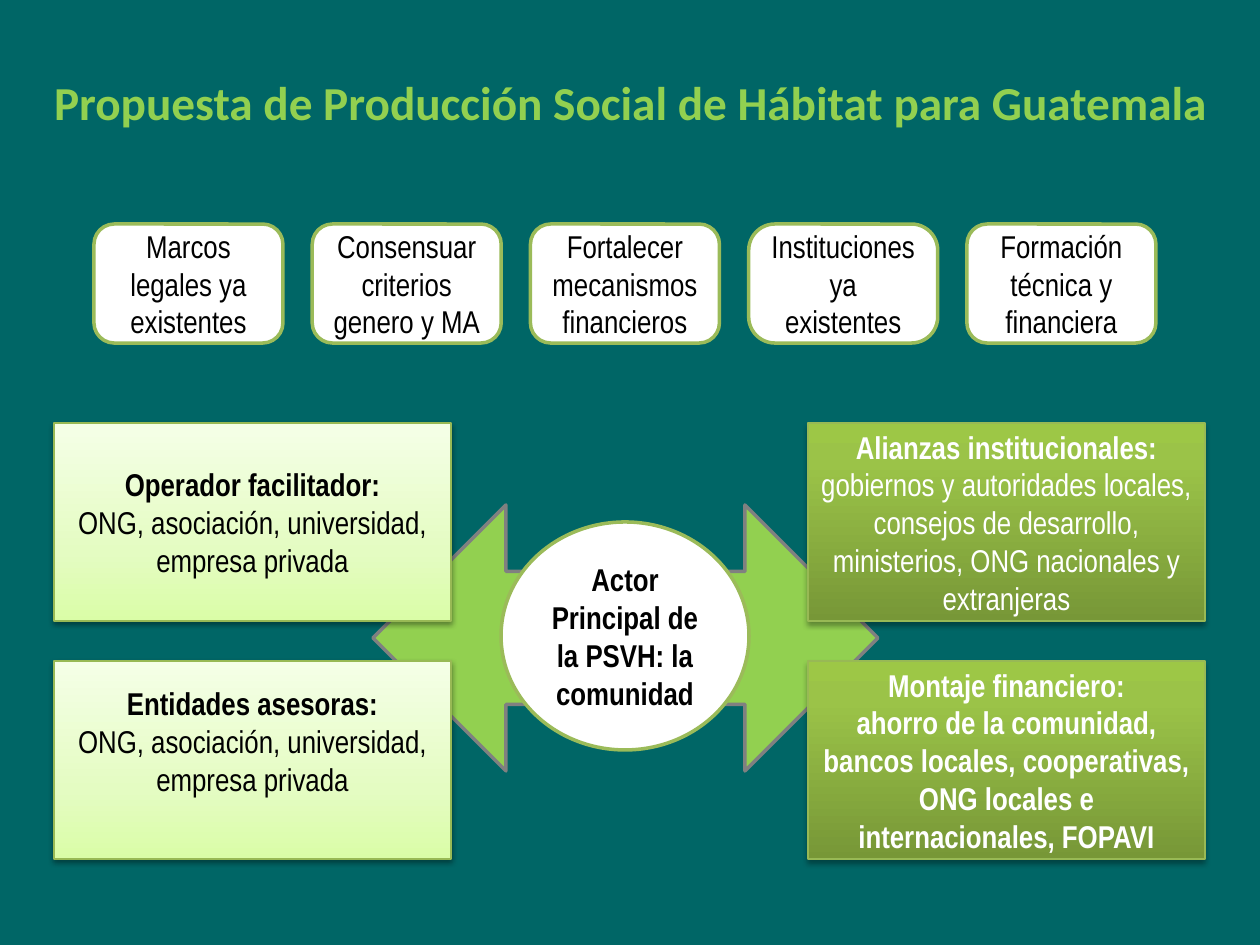
from lxml import etree
from pptx import Presentation
from pptx.dml.color import RGBColor
from pptx.enum.shapes import MSO_SHAPE
from pptx.enum.text import MSO_ANCHOR, PP_ALIGN
from pptx.oxml.ns import qn
from pptx.util import Emu, Pt

TEAL = RGBColor(0x00, 0x66, 0x66)
LIME = RGBColor(0x92, 0xD0, 0x50)
OLIVE = RGBColor(0x9B, 0xBB, 0x59)
EDGE = RGBColor(0x98, 0xB9, 0x55)
GRAY = RGBColor(0x80, 0x80, 0x80)
WHITE = RGBColor(0xFF, 0xFF, 0xFF)
BLACK = RGBColor(0x00, 0x00, 0x00)
PALE_STOPS = [(0, RGBColor(0xDA, 0xFD, 0xA7)), (35, RGBColor(0xE4, 0xFC, 0xC2)),
              (100, RGBColor(0xF5, 0xFF, 0xE7))]
GREEN_STOPS = [(0, RGBColor(0x77, 0x97, 0x37)), (80, RGBColor(0x9B, 0xC3, 0x48)),
               (100, RGBColor(0x9D, 0xC7, 0x46))]
CENTER, MIDDLE = PP_ALIGN.CENTER, MSO_ANCHOR.MIDDLE
RECT, ROUND = MSO_SHAPE.RECTANGLE, MSO_SHAPE.ROUNDED_RECTANGLE
OVAL, ARROW = MSO_SHAPE.OVAL, MSO_SHAPE.LEFT_RIGHT_ARROW

TITLE = "Propuesta de Producción Social de Hábitat para Guatemala"
# text, corner rounding
CONDITIONS = [
    ("Marcos legales ya existentes", 0.17),
    ("Consensuar criterios genero y MA", 0.17),
    ("Fortalecer mecanismos financieros", 0.17),
    ("Instituciones ya existentes", 0.22),
    ("Formación técnica y financiera", 0.17),
]
CORE = "Actor Principal de la PSVH: la comunidad"
ADVISERS = "ONG, asociación, universidad, empresa privada"
# column, row, heading, body, body bold, extra bottom inset
ACTORS = [
    (0, 0, "Operador facilitador:", ADVISERS, False, 0),
    (1, 0, "Alianzas institucionales:",
     "gobiernos y autoridades locales, consejos de desarrollo, "
     "ministerios, ONG nacionales y extranjeras", False, 0),
    (1, 1, "Montaje financiero:",
     "ahorro de la comunidad, bancos locales, cooperativas, "
     "ONG locales e internacionales, FOPAVI", True, 0),
    (0, 1, "Entidades asesoras:", ADVISERS, False, 38),
]
# text colour, gradient, shadow opacity, shadow distance in points
COLUMN_STYLES = [(BLACK, PALE_STOPS, 38, 1.6), (WHITE, GREEN_STOPS, 35, 1.8)]


def px(n):
    return Emu(round(n * 914400 / 126))


def add_box(slide, kind, left, top, width, height, line, weight):
    sp = slide.shapes.add_shape(kind, px(left), px(top), px(width), px(height))
    sp.shadow.inherit = False
    sp.fill.solid()
    sp.fill.fore_color.rgb = WHITE
    sp.line.color.rgb = line
    sp.line.width = Pt(weight)
    return sp


def write(sp, paragraphs, color):
    """Fill a shape with centred (text, bold) paragraphs."""
    tf = sp.text_frame
    tf.word_wrap = True
    tf.vertical_anchor = MIDDLE
    for i, (text, bold) in enumerate(paragraphs):
        p = tf.add_paragraph() if i else tf.paragraphs[0]
        p.text = text
        p.alignment = CENTER
        p.font.name = "Arial Narrow"
        p.font.size = Pt(18)
        p.font.bold = bold
        p.font.color.rgb = color


def add_color(parent, color):
    return etree.SubElement(parent, qn("a:srgbClr"), val=str(color))


def set_gradient(sp, stops):
    """Run the stops from the bottom edge to the top edge."""
    sp.fill.gradient()
    sp.fill.gradient_angle = 90
    stop_list = sp._element.spPr.find(qn("a:gradFill")).find(qn("a:gsLst"))
    for old in list(stop_list):
        stop_list.remove(old)
    for percent, color in stops:
        add_color(etree.SubElement(stop_list, qn("a:gs"), pos=str(percent * 1000)), color)


def set_shadow(sp, opacity, distance):
    effects = sp._element.spPr.find(qn("a:effectLst"))
    shadow = etree.SubElement(effects, qn("a:outerShdw"), blurRad=str(Pt(3.1)),
                              dist=str(Pt(distance)), dir="5400000", rotWithShape="0")
    etree.SubElement(add_color(shadow, BLACK), qn("a:alpha"), val=str(opacity * 1000))


def main():
    prs = Presentation()
    prs.slide_width, prs.slide_height = px(1260), px(945)
    slide = prs.slides.add_slide(prs.slide_layouts[5])
    slide.background.fill.solid()
    slide.background.fill.fore_color.rgb = TEAL

    title = slide.shapes.title
    title.left, title.top, title.width, title.height = px(35), px(27), px(1191), px(149)
    title.text_frame.vertical_anchor = MIDDLE
    p = title.text_frame.paragraphs[0]
    p.text = TITLE
    p.alignment = CENTER
    p.font.name = "Calibri"
    p.font.size = Pt(27)
    p.font.bold = True
    p.font.color.rgb = LIME

    arrow = add_box(slide, ARROW, 373, 505, 505, 266, GRAY, 2)
    arrow.fill.fore_color.rgb = LIME

    for i, (text, rounding) in enumerate(CONDITIONS):
        sp = add_box(slide, ROUND, 94 + i * 218.25, 224, 189, 119, OLIVE, 2)
        sp.adjustments[0] = rounding
        write(sp, [(text, False)], BLACK)

    core = add_box(slide, OVAL, 501, 522, 248, 228, OLIVE, 2)
    write(core, [(CORE, True)], BLACK)

    for column, row, heading, body, bold, inset in ACTORS:
        color, stops, opacity, distance = COLUMN_STYLES[column]
        sp = add_box(slide, RECT, 54 + column * 754, 423 + row * 238, 397, 198, EDGE, 0.75)
        set_gradient(sp, stops)
        set_shadow(sp, opacity, distance)
        write(sp, [(heading, True), (body, bold)], color)
        sp.text_frame.margin_bottom += px(inset)

    prs.save("out.pptx")


if __name__ == "__main__":
    main()
